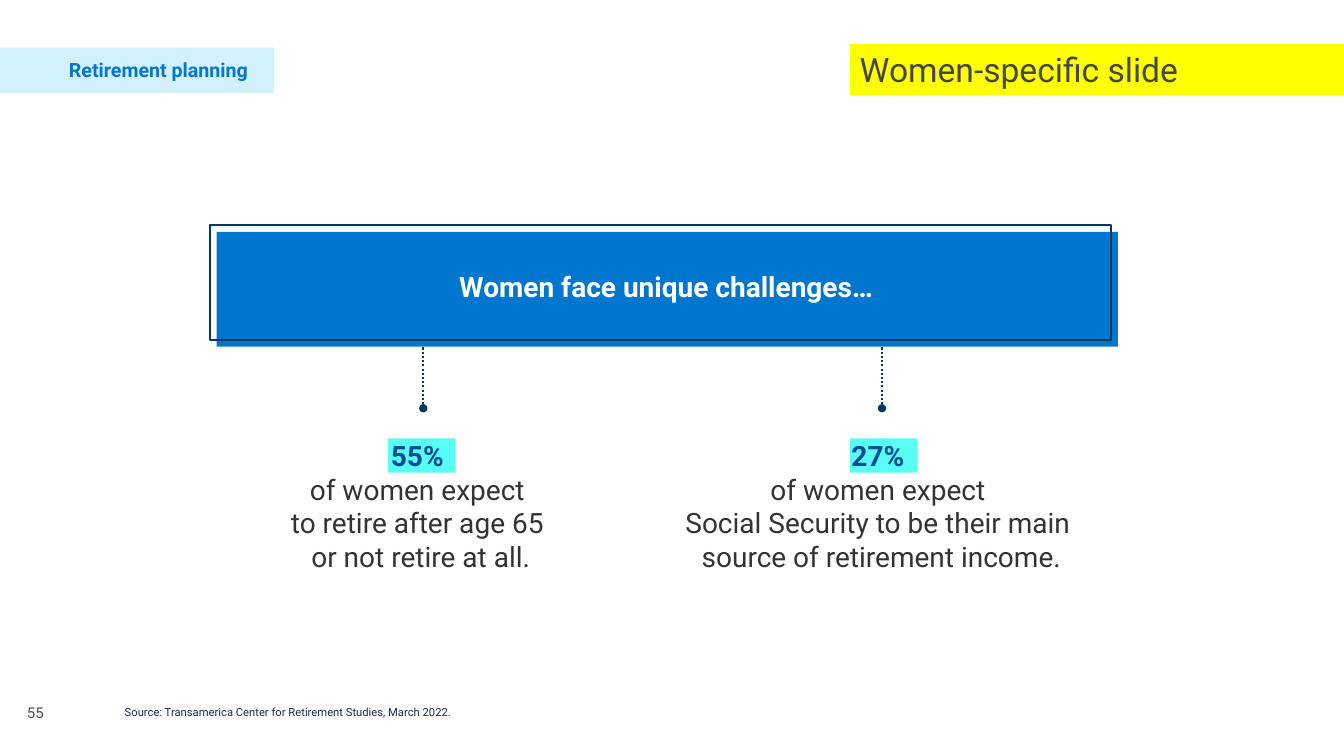
import pptx
import pptx.dml.color
import pptx.enum.dml
import pptx.enum.shapes
import pptx.enum.text
import pptx.oxml
import pptx.oxml.ns
import pptx.util

Pt = pptx.util.Pt
ALIGN = pptx.enum.text.PP_ALIGN
ANCHOR = pptx.enum.text.MSO_ANCHOR

FONT = "Roboto"
BLUE, NAVY = "0076CF", "003865"

FLAG = "Women-specific slide"
SECTION = "Retirement planning"
HEADLINE = "Women face unique challenges…"
SOURCE = "Source: Transamerica Center for Retirement Studies, March 2022."
PAGE_NUMBER = "55"

# Trailing spaces shift the centred lines slightly to the left.
STATISTICS = [
    {
        "value": "55% ",
        "lines": ["of women expect ", "to retire after age 65 ", "or not retire at all."],
        "text_left": 140.4, "highlight_left": 277.2, "pointer": 302.4,
    },
    {
        "value": "27% ",
        "lines": ["of women expect ", "Social Security to be their main ", "source of retirement income."],
        "text_left": 469.4, "highlight_left": 607, "pointer": 630,
    },
]

BANNER = (154.8, 165.6, 643.7, 82.1)
FRAME_OFFSET = 5
POINTER_TOP, POINTER_BOTTOM = 236.2, 291.6


def color(hex_string):
    return pptx.dml.color.RGBColor.from_string(hex_string)


def add_box(slide, box, fill=None, line=None):
    shape = slide.shapes.add_shape(
        pptx.enum.shapes.MSO_SHAPE.RECTANGLE, *[Pt(length) for length in box])
    shape.shadow.inherit = False
    if fill:
        shape.fill.solid()
        shape.fill.fore_color.rgb = color(fill)
    else:
        shape.fill.background()
    if line:
        shape.line.color.rgb = color(line)
        shape.line.width = Pt(1.5)
    else:
        shape.line.fill.background()
    return shape


def add_pointer(slide, x):
    """Draw a dotted vertical line that ends in a dot."""
    connector = slide.shapes.add_connector(
        pptx.enum.shapes.MSO_CONNECTOR.STRAIGHT,
        Pt(x), Pt(POINTER_TOP), Pt(x), Pt(POINTER_BOTTOM))
    connector.line.color.rgb = color(NAVY)
    connector.line.width = Pt(1.5)
    connector.line.dash_style = pptx.enum.dml.MSO_LINE.ROUND_DOT
    properties = connector._element.spPr
    outline = properties.find(pptx.oxml.ns.qn("a:ln"))
    pptx.oxml.ns.qn("a:tailEnd")
    namespace = pptx.oxml.ns.nsdecls("a")
    outline.append(pptx.oxml.parse_xml(f'<a:tailEnd {namespace} type="oval"/>'))
    properties.append(pptx.oxml.parse_xml(f"<a:effectLst {namespace}/>"))


def write(shape, lines, size, font_color, bold=False, first_format=None,
          align=ALIGN.LEFT, anchor=ANCHOR.TOP, margins=(7.2, 3.6), wrap=True):
    """Fill a shape with one paragraph; first_format is (colour, bold) of line one."""
    frame = shape.text_frame
    frame.word_wrap = wrap
    frame.auto_size = pptx.enum.text.MSO_AUTO_SIZE.NONE
    frame.vertical_anchor = anchor
    frame.margin_left = frame.margin_right = Pt(margins[0])
    frame.margin_top = frame.margin_bottom = Pt(margins[1])
    paragraph = frame.paragraphs[0]
    paragraph.alignment = align
    paragraph.line_spacing = 1.0
    paragraph.space_before = Pt(0)
    paragraph.font.size = Pt(size)
    for index, line in enumerate(lines):
        if index:
            paragraph.add_line_break()
        run = paragraph.add_run()
        run.text = line
        run_color, run_bold = (font_color, bold)
        if first_format and index == 0:
            run_color, run_bold = first_format
        run.font.name = FONT
        run.font.size = Pt(size)
        run.font.bold = run_bold
        run.font.color.rgb = color(run_color)


def add_text(slide, box, lines, size, font_color, **text_format):
    text_box = slide.shapes.add_textbox(*[Pt(length) for length in box])
    write(text_box, lines, size, font_color, **text_format)


def add_headline(slide):
    """Place the title placeholder in front of the banner."""
    title = slide.shapes.title
    title.left, title.top, title.width, title.height = (
        Pt(227.5), Pt(188.6), Pt(496.8), Pt(31.7))
    write(title, [HEADLINE], 20, "FFFFFF", bold=True, align=ALIGN.CENTER)
    slide.shapes._spTree.append(title._element)


def main():
    presentation = pptx.Presentation()
    presentation.slide_width, presentation.slide_height = Pt(960), Pt(540)
    slide = presentation.slides.add_slide(presentation.slide_layouts[5])

    flag = add_box(slide, (607, 31.5, 353, 36.5), fill="FFFF00")
    write(flag, [FLAG], 24, "464647")
    add_text(slide, (12.2, 499, 51, 41), [PAGE_NUMBER], 10.7, "4D4E53")
    add_box(slide, (0, 34, 195.8, 32.4), fill="D2F1FD")
    add_text(slide, (42.2, 37.7, 151.2, 24.5), [SECTION], 14, BLUE, bold=True, wrap=False)

    for statistic in STATISTICS:
        add_pointer(slide, statistic["pointer"])
        add_box(slide, (statistic["highlight_left"], 313.2, 48.2, 24.5), fill="57FFF5")
        add_text(slide, (statistic["text_left"], 308.2, 320.4, 127.4),
                 [statistic["value"], *statistic["lines"]], 20, "333333",
                 first_format=("004B96", True), align=ALIGN.CENTER, margins=(9.4, 5))

    left, top, width, height = BANNER
    add_box(slide, BANNER, fill=BLUE)
    add_headline(slide)
    add_box(slide, (left - FRAME_OFFSET, top - FRAME_OFFSET, width, height), line=NAVY)

    add_text(slide, (82, 486.7, 710.6, 30.2), [SOURCE], 8, "162B48", anchor=ANCHOR.BOTTOM)
    presentation.save("out.pptx")


if __name__ == "__main__":
    main()
